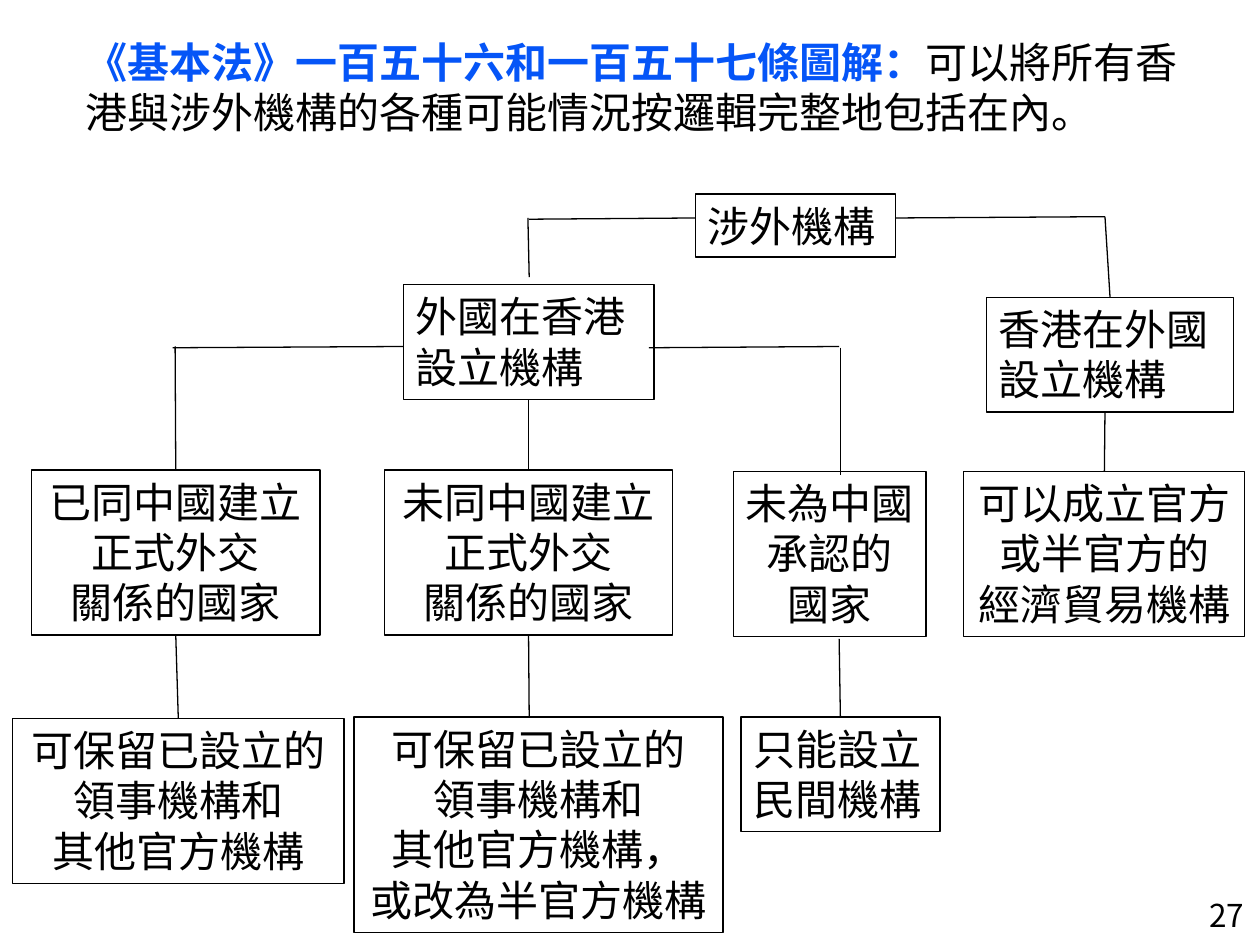
from lxml.etree import SubElement
from pptx import Presentation
from pptx.dml.color import RGBColor
from pptx.enum.shapes import MSO_CONNECTOR, MSO_SHAPE
from pptx.enum.text import MSO_ANCHOR, MSO_AUTO_SIZE, PP_ALIGN
from pptx.oxml.ns import qn
from pptx.util import Inches, Pt

FONT = "Noto Sans CJK SC"
BLACK, WHITE, BLUE = "000000", "FFFFFF", "0555F7"


def rgb(value):
    return RGBColor.from_string(value)


def add_run(p, text, size=24, color=BLACK, bold=False):
    """Add a run whose Latin and East Asian fonts are both FONT."""
    r = p.add_run()
    r.text = text
    r.font.name = FONT
    r.font.size = Pt(size)
    r.font.bold = bold
    r.font.color.rgb = rgb(color)
    SubElement(r.font._element, qn("a:ea")).set("typeface", FONT)


prs = Presentation()
prs.slide_width, prs.slide_height = Inches(10), Inches(7.5)
s = prs.slides.add_slide(prs.slide_layouts[6])

# name: left, top, width, height, lines (several lines are centred)
BOXES = {
    "root": (5.52, 1.54, 1.59, 0.5, ["涉外機構"]),
    "foreign": (3.2, 2.26, 1.99, 0.91, ["外國在香港設立機構"]),
    "abroad": (7.83, 2.36, 1.96, 0.91, ["香港在外國設立機構"]),
    "formal": (0.25, 3.73, 2.29, 1.31, ["已同中國建立", "正式外交", "關係的國家"]),
    "informal": (3.05, 3.73, 2.29, 1.31, ["未同中國建立", "正式外交", "關係的國家"]),
    "unrecognised": (5.82, 3.74, 1.53, 1.31, ["未為中國", "承認的", "國家"]),
    "trade": (7.65, 3.74, 2.23, 1.31, ["可以成立官方", "或半官方的", "經濟貿易機構"]),
    "consular": (0.1, 5.7, 2.63, 1.31, ["可保留已設立的", "領事機構和", "其他官方機構"]),
    "semi": (2.81, 5.69, 2.93, 1.71,
             ["可保留已設立的", "領事機構和", "其他官方機構，", "或改為半官方機構"]),
    "private": (5.88, 5.69, 1.58, 0.91, ["只能設立民間機構"]),
}
shapes = {}
for name, (x, y, w, h, lines) in BOXES.items():
    sp = s.shapes.add_shape(MSO_SHAPE.RECTANGLE, Inches(x), Inches(y), Inches(w), Inches(h))
    sp.shadow.inherit = False
    sp.fill.solid()
    sp.fill.fore_color.rgb = rgb(WHITE)
    sp.line.color.rgb = rgb(BLACK)
    sp.line.width = Pt(0.75)
    tf = sp.text_frame
    centred = len(lines) > 1
    tf.word_wrap = not centred
    tf.auto_size = MSO_AUTO_SIZE.SHAPE_TO_FIT_TEXT
    tf.vertical_anchor = MSO_ANCHOR.TOP
    for i, line in enumerate(lines):
        p = tf.add_paragraph() if i else tf.paragraphs[0]
        p.alignment = PP_ALIGN.CENTER if centred else PP_ALIGN.LEFT
        add_run(p, line)
    shapes[name] = sp

# An end is either a point or a box with a connection site (0 top, 2 bottom)
LINES = [
    ((4.2, 1.74), (5.52, 1.73)),
    ((4.19, 1.73), (4.2, 2.2)),
    ((8.77, 1.72), (7.11, 1.73)),
    ((8.77, 1.72), ("abroad", 0)),
    ((1.37, 2.76), (3.2, 2.75)),
    ((1.39, 2.75), ("formal", 0)),
    ((6.66, 2.75), (5.15, 2.76)),
    ((6.67, 2.76), (6.67, 3.77)),
    (("foreign", 2), ("informal", 0)),
    ((8.77, 3.27), ("trade", 0)),
    (("formal", 2), ("consular", 0)),
    (("informal", 2), (4.2, 5.69)),
    ((6.66, 5.07), ("private", 0)),
]
for begin, end in LINES:
    cn = s.shapes.add_connector(MSO_CONNECTOR.STRAIGHT, 0, 0, 0, 0)
    if begin[0] in shapes:
        cn.begin_connect(shapes[begin[0]], begin[1])
    else:
        cn.begin_x, cn.begin_y = Inches(begin[0]), Inches(begin[1])
    if end[0] in shapes:
        cn.end_connect(shapes[end[0]], end[1])
    else:
        cn.end_x, cn.end_y = Inches(end[0]), Inches(end[1])
    cn.line.color.rgb = rgb(BLACK)
    cn.line.width = Pt(0.75)
    SubElement(cn._element.spPr, qn("a:effectLst"))

TEXTS = [
    (0.58, 0.24, 8.91, 0.91, [
        ("《基本法》一百五十六和一百五十七條圖解：", 24, BLUE, True),
        ("可以將所有香港與涉外機構的各種可能情況按邏輯完整地包括在內。", 24, BLACK, False),
    ]),
    (9.5, 7.06, 0.5, 0.4, [("27", 18, BLACK, False)]),
]
for x, y, w, h, runs in TEXTS:
    tf = s.shapes.add_textbox(Inches(x), Inches(y), Inches(w), Inches(h)).text_frame
    tf.word_wrap = True
    tf.auto_size = MSO_AUTO_SIZE.SHAPE_TO_FIT_TEXT
    for run in runs:
        add_run(tf.paragraphs[0], *run)

prs.save("out.pptx")
